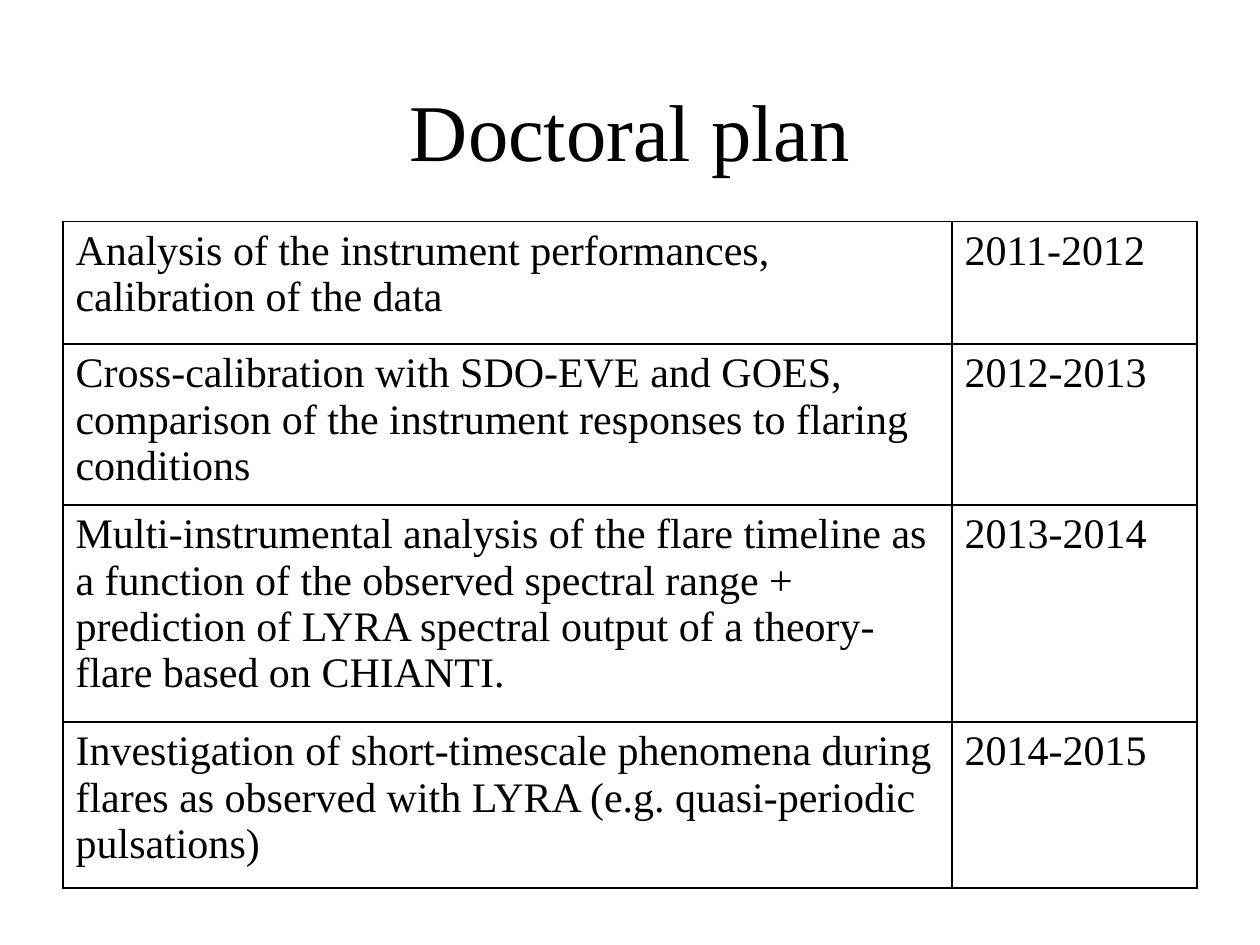
from lxml import etree
from pptx import Presentation
from pptx.dml.color import RGBColor
from pptx.enum.text import MSO_ANCHOR, PP_ALIGN
from pptx.oxml.ns import qn
from pptx.util import Pt

MIDDLE, TOP = MSO_ANCHOR.MIDDLE, MSO_ANCHOR.TOP
CENTER, LEFT = PP_ALIGN.CENTER, PP_ALIGN.LEFT
BLACK = RGBColor(0x00, 0x00, 0x00)
FONT = "Times New Roman"
TITLE_ONLY = 5

PLAN = [
    ("Analysis of the instrument performances, calibration of the data", "2011-2012", 70),
    ("Cross-calibration with SDO-EVE and GOES, comparison of the instrument "
     "responses to flaring conditions", "2012-2013", 92),
    ("Multi-instrumental analysis of the flare timeline as a function of the "
     "observed spectral range + prediction of LYRA spectral output of a "
     "theory-flare based on CHIANTI.", "2013-2014", 124),
    ("Investigation of short-timescale phenomena during flares as observed with "
     "LYRA (e.g. quasi-periodic pulsations)", "2014-2015", 95),
]


def write(frame, text, size, align):
    """Write one formatted run into the first paragraph of a text frame."""
    paragraph = frame.paragraphs[0]
    paragraph.alignment = align
    run = paragraph.add_run()
    run.text = text
    run.font.name = FONT
    run.font.size = Pt(size)
    run.font.bold = False
    run.font.color.rgb = BLACK


def border_cell(cell):
    """Clear a cell's fill and draw a thin black line on its four sides."""
    properties = cell._tc.get_or_add_tcPr()
    for side in ("a:lnL", "a:lnR", "a:lnT", "a:lnB"):
        line = etree.SubElement(properties, qn(side), w=str(Pt(1)))
        fill = etree.SubElement(line, qn("a:solidFill"))
        etree.SubElement(fill, qn("a:srgbClr"), val=str(BLACK))
    cell.fill.background()


def add_title(slide, left, top, width, height):
    """Place the slide title in the given box."""
    title = slide.shapes.title
    title.left, title.top = Pt(left), Pt(top)
    title.width, title.height = Pt(width), Pt(height)
    title.text_frame.vertical_anchor = MIDDLE
    write(title.text_frame, "Doctoral plan", 46, CENTER)


def add_plan(slide, left, top, width, period_width):
    """Place the table of tasks and periods with the given width."""
    height = sum(row_height for _, _, row_height in PLAN)
    table = slide.shapes.add_table(
        len(PLAN), 2, Pt(left), Pt(top), Pt(width), Pt(height)).table
    table.first_row = table.horz_banding = False
    table.columns[0].width = Pt(width - period_width)
    table.columns[1].width = Pt(period_width)
    for row, (task, period, row_height) in zip(table.rows, PLAN):
        row.height = Pt(row_height)
        for cell, text in zip(row.cells, (task, period)):
            cell.vertical_anchor = TOP
            write(cell.text_frame, text, 24, LEFT)
            border_cell(cell)


def main():
    """Build and save the doctoral plan slide."""
    deck = Presentation()
    deck.slide_width, deck.slide_height = Pt(720), Pt(540)
    slide = deck.slides.add_slide(deck.slide_layouts[TITLE_ONLY])
    add_title(slide, 72, 39.6, 576, 68.4)
    add_plan(slide, 36, 126.6, 648, 140)
    deck.save("out.pptx")


if __name__ == "__main__":
    main()
